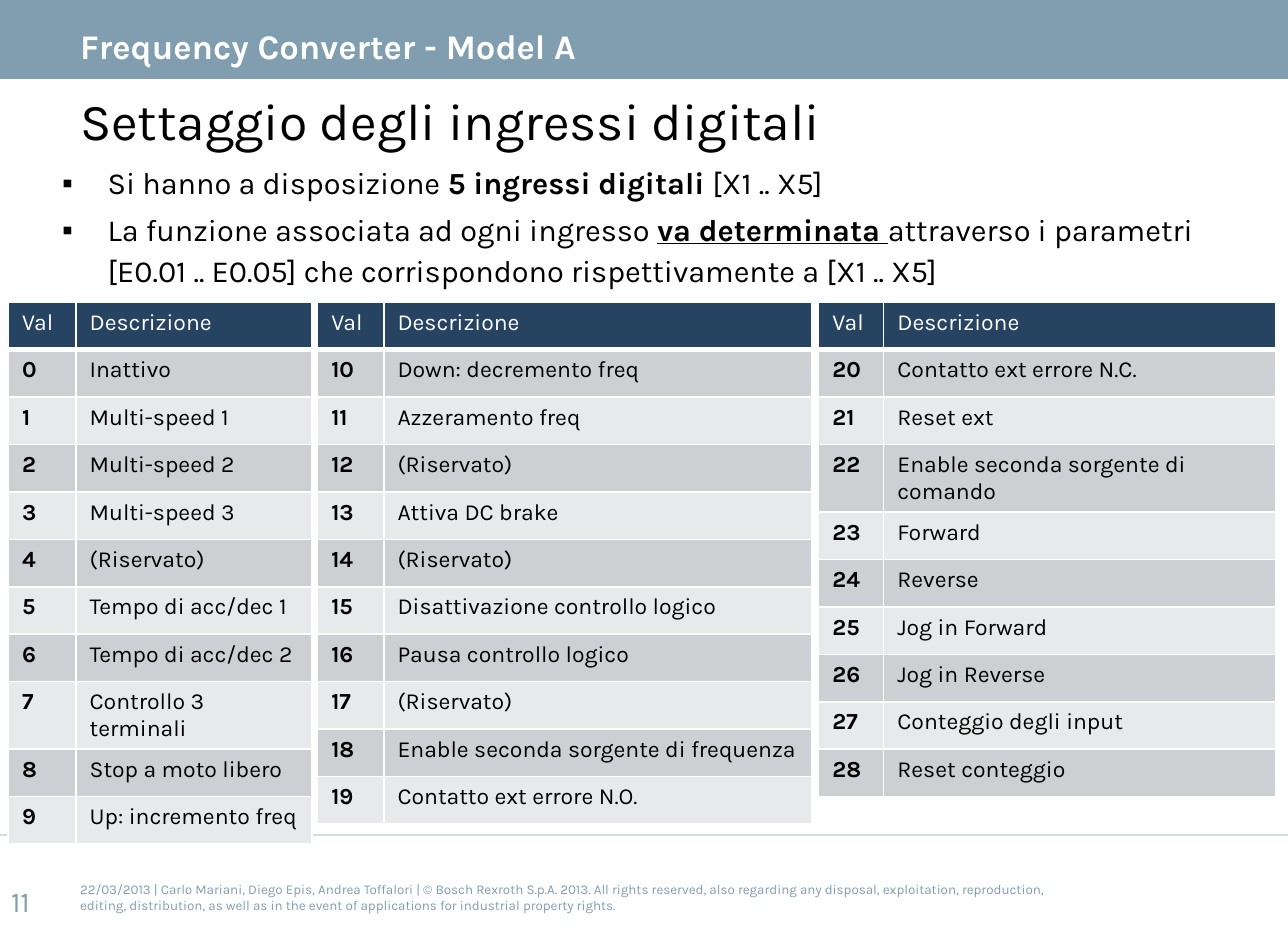
from dataclasses import dataclass

from lxml.etree import SubElement
from pptx import Presentation
from pptx.dml.color import RGBColor
from pptx.enum.shapes import MSO_CONNECTOR, MSO_SHAPE
from pptx.enum.text import MSO_ANCHOR, MSO_AUTO_SIZE, PP_ALIGN
from pptx.oxml.ns import qn
from pptx.util import Emu, Inches, Pt

FONT = "Karla"
WHITE = RGBColor(0xFF, 0xFF, 0xFF)
BLACK = RGBColor(0x00, 0x00, 0x00)
STEEL = RGBColor(0x81, 0x9E, 0xB1)
PALE = RGBColor(0xCF, 0xDD, 0xE7)
NAVY = RGBColor(0x26, 0x44, 0x61)
GREY = RGBColor(0xCD, 0xCF, 0xD2)
LIGHT = RGBColor(0xE8, 0xE9, 0xEA)

WIDTH, HEIGHT = Inches(9.33), Inches(6.75)
ROW = 5.09
TABLE_TOP = 32.44
BAND = 8.59
MARGIN = 6.22


@dataclass(frozen=True)
class Box:
    left: float
    top: float
    width: float
    height: float

    def emu(self) -> tuple[Emu, Emu, Emu, Emu]:
        return across(self.left), down(self.top), across(self.width), down(self.height)


@dataclass(frozen=True)
class ValueTable:
    left: float
    val_width: float
    text_width: float
    first: int
    items: tuple[str, ...]


@dataclass(frozen=True)
class Rule:
    top: float
    color: RGBColor


@dataclass(frozen=True)
class Label:
    box: Box
    text: str
    size: float
    color: RGBColor = STEEL
    bold: bool = False
    inset: float = 0
    spacing: float = 1
    anchor: MSO_ANCHOR = MSO_ANCHOR.MIDDLE
    wrap: bool = True


TABLES = (
    ValueTable(0.64, 5.25, 18.33, 0, (
        "Inattivo", "Multi-speed 1", "Multi-speed 2", "Multi-speed 3", "(Riservato)",
        "Tempo di acc/dec 1", "Tempo di acc/dec 2", "Controllo 3 terminali",
        "Stop a moto libero", "Up: incremento freq")),
    ValueTable(24.65, 5.14, 33.23, 10, (
        "Down: decremento freq", "Azzeramento freq", "(Riservato)", "Attiva DC brake",
        "(Riservato)", "Disattivazione controllo logico", "Pausa controllo logico",
        "(Riservato)", "Enable seconda sorgente di frequenza", "Contatto ext errore N.O.")),
    ValueTable(63.56, 5.04, 30.44, 20, (
        "Contatto ext errore N.C.", "Reset ext", "Enable seconda sorgente di comando",
        "Forward", "Reverse", "Jog in Forward", "Jog in Reverse",
        "Conteggio degli input", "Reset conteggio")),
)

RULES = (Rule(BAND, WHITE), Rule(89.63, PALE))

LABELS = (
    Label(Box(MARGIN, 93.93, 75.03, 4.74),
          "22/03/2013 | Carlo Mariani, Diego Epis, Andrea Toffalori | © Bosch Rexroth S.p.A. 2013. "
          "All rights reserved, also regarding any disposal, exploitation, reproduction, editing, "
          "distribution, as well as in the event of applications for industrial property rights.", 7),
    Label(Box(MARGIN, 0, 85.74, 8.44), "Frequency Converter - Model A", 18, WHITE,
          bold=True, inset=0.06, spacing=1.11),
    Label(Box(0.86, 94.81, 4.5, 3.11), "11", 15, anchor=MSO_ANCHOR.TOP, wrap=False),
)


def across(share: float) -> Emu:
    return Emu(round(WIDTH * share / 100))


def down(share: float) -> Emu:
    return Emu(round(HEIGHT * share / 100))


def add_text(p, text: str, *, size: float, color: RGBColor = BLACK,
             bold: bool = False, underline: bool = False) -> None:
    r = p.add_run()
    r.text = text
    r.font.name = FONT
    r.font.size = Pt(size)
    r.font.color.rgb = color
    r.font.bold = bold
    r.font.underline = underline


def set_frame(tf, top: float, anchor: MSO_ANCHOR = MSO_ANCHOR.TOP, wrap: bool = True) -> None:
    tf.auto_size = MSO_AUTO_SIZE.NONE
    tf.word_wrap = wrap
    tf.vertical_anchor = anchor
    tf.margin_left = tf.margin_right = tf.margin_bottom = 0
    tf.margin_top = Inches(top)


def place(sp, box: Box) -> None:
    sp.left, sp.top, sp.width, sp.height = box.emu()


def draw_title(sp) -> None:
    place(sp, Box(MARGIN, BAND, 89.39, 7.56))
    set_frame(sp.text_frame, 0.01)
    p = sp.text_frame.paragraphs[0]
    p.alignment = PP_ALIGN.LEFT
    p.line_spacing = 1.11
    add_text(p, "Settaggio degli ingressi digitali", size=27)


def add_bullet(p, before: float, align: PP_ALIGN) -> None:
    pPr = p._p.get_or_add_pPr()
    pPr.set("marL", str(Inches(0.33)))
    pPr.set("indent", str(-Inches(0.33)))
    SubElement(pPr, qn("a:buChar")).set("char", "▪")
    p.alignment = align
    p.line_spacing = 1.11
    p.space_before = Pt(before)


def draw_body(sp) -> None:
    place(sp, Box(4.82, 16.15, 90.35, 16.89))
    tf = sp.text_frame
    set_frame(tf, 0.07)
    p = tf.paragraphs[0]
    add_bullet(p, 0, PP_ALIGN.JUSTIFY)
    add_text(p, "Si hanno a disposizione ", size=16)
    add_text(p, "5 ingressi digitali ", size=16, bold=True)
    add_text(p, "[X1 .. X5]", size=16)
    p = tf.add_paragraph()
    add_bullet(p, 3.2, PP_ALIGN.LEFT)
    add_text(p, "La funzione associata ad ogni ingresso ", size=16)
    add_text(p, "va determinata ", size=16, bold=True, underline=True)
    add_text(p, "attraverso i parametri [E0.01 .. E0.05] che corrispondono "
                "rispettivamente a [X1 .. X5]", size=16)


def draw_rule(s, rule: Rule) -> None:
    y = down(rule.top)
    ln = s.shapes.add_connector(MSO_CONNECTOR.STRAIGHT, 0, y, WIDTH, y)
    ln.line.color.rgb = rule.color
    ln.line.width = Pt(1)
    SubElement(ln._element.spPr, qn("a:effectLst"))


def draw_label(s, label: Label) -> None:
    tf = s.shapes.add_textbox(*label.box.emu()).text_frame
    set_frame(tf, label.inset, label.anchor, label.wrap)
    p = tf.paragraphs[0]
    p.line_spacing = label.spacing
    add_text(p, label.text, size=label.size, color=label.color, bold=label.bold)


def style_cell(cell, fill: RGBColor, bottom: float) -> None:
    tcPr = cell._tc.get_or_add_tcPr()
    for side, width in (("L", 1), ("R", 1), ("T", 1), ("B", bottom)):
        ln = SubElement(tcPr, qn(f"a:ln{side}"), w=str(Pt(width)))
        SubElement(SubElement(ln, qn("a:solidFill")), qn("a:srgbClr")).set("val", str(WHITE))
    cell.fill.solid()
    cell.fill.fore_color.rgb = fill


def draw_table(s, spec: ValueTable) -> None:
    rows = [("Val", "Descrizione")]
    rows += [(str(n), item) for n, item in enumerate(spec.items, spec.first)]
    widths = (spec.val_width, spec.text_width)
    box = Box(spec.left, TABLE_TOP, sum(widths), ROW * len(rows))
    tbl = s.shapes.add_table(len(rows), 2, *box.emu()).table
    for column, width in zip(tbl.columns, widths):
        column.width = across(width)
    for i, row in enumerate(rows):
        tbl.rows[i].height = down(ROW)
        fill = NAVY if i == 0 else GREY if i % 2 else LIGHT
        for j, text in enumerate(row):
            cell = tbl.cell(i, j)
            style_cell(cell, fill, 1 if i else 3)
            add_text(cell.text_frame.paragraphs[0], text, size=12,
                     color=BLACK if i else WHITE, bold=i > 0 and j == 0)


def main() -> None:
    prs = Presentation()
    prs.slide_width, prs.slide_height = WIDTH, HEIGHT
    s = prs.slides.add_slide(prs.slide_layouts[1])
    band = s.shapes.add_shape(MSO_SHAPE.RECTANGLE, *Box(0, 0, 100, BAND).emu())
    band.shadow.inherit = False
    band.fill.solid()
    band.fill.fore_color.rgb = STEEL
    band.line.fill.background()
    for rule in RULES:
        draw_rule(s, rule)
    draw_title(s.shapes.title)
    draw_body(s.placeholders[1])
    for label in LABELS:
        draw_label(s, label)
    for spec in TABLES:
        draw_table(s, spec)
    prs.save("out.pptx")


if __name__ == "__main__":
    main()
